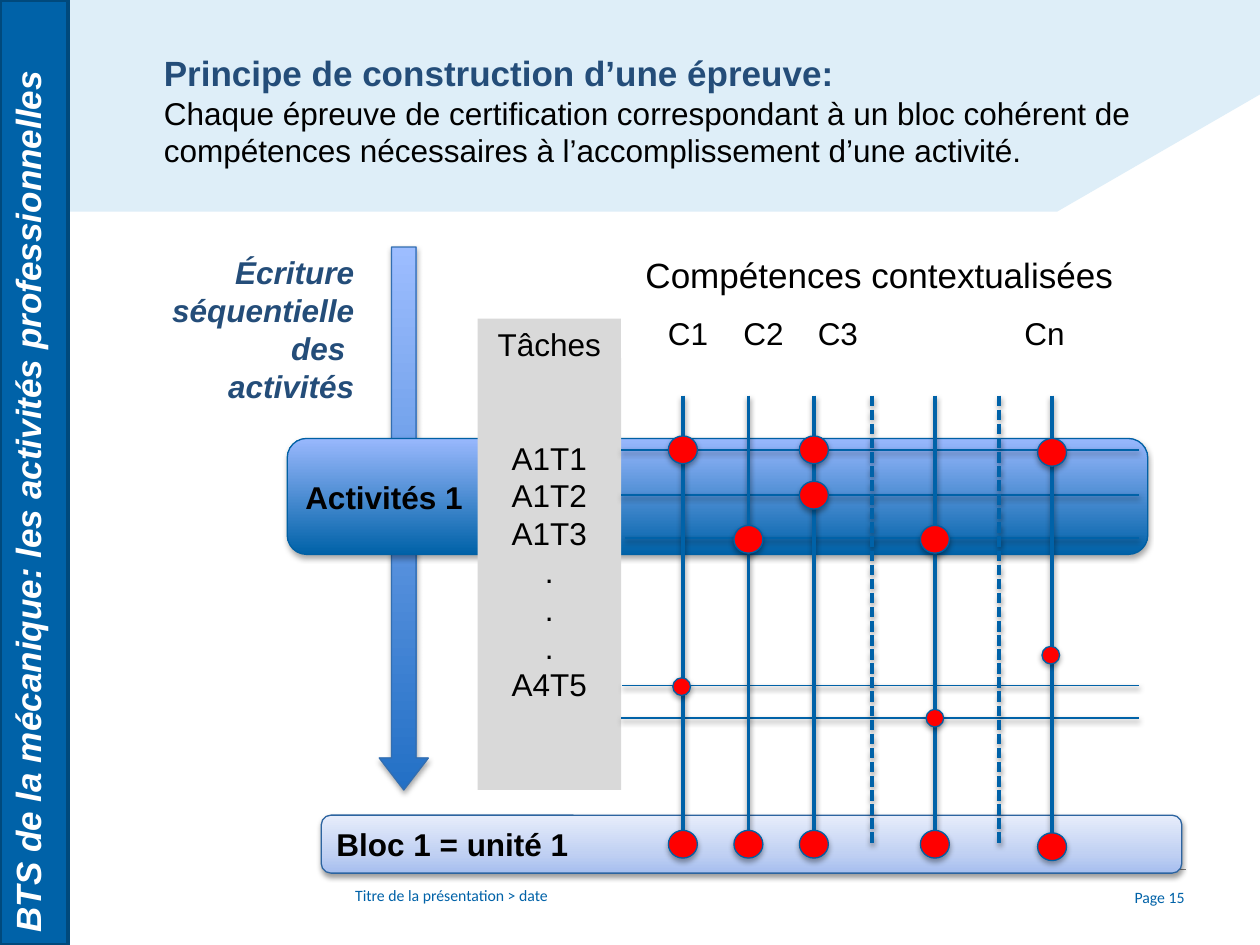
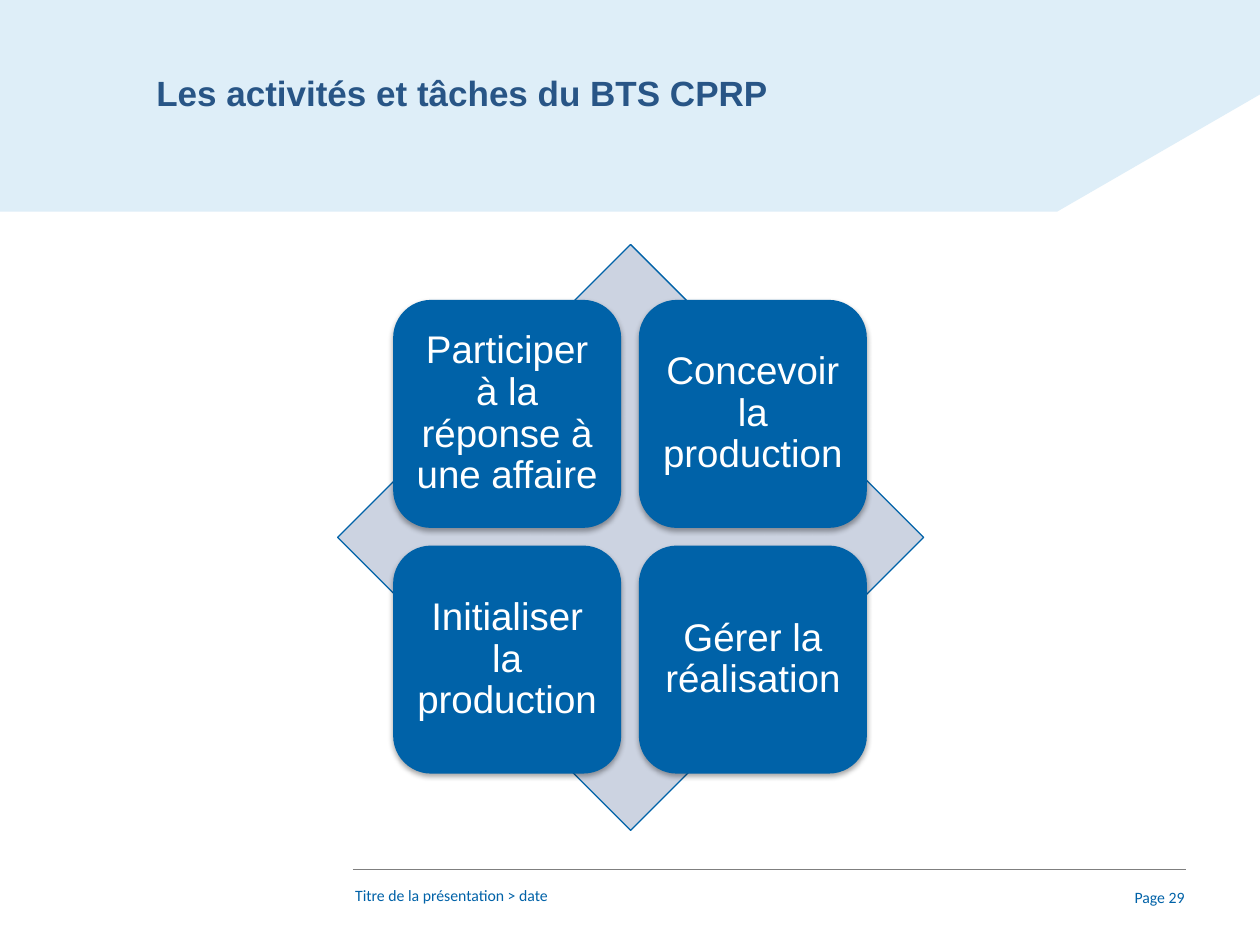
from itertools import product

from lxml.etree import SubElement
from pptx import Presentation
from pptx.dml.color import RGBColor
from pptx.enum.dml import MSO_LINE
from pptx.enum.shapes import MSO_CONNECTOR, MSO_SHAPE
from pptx.enum.text import MSO_ANCHOR, MSO_AUTO_SIZE, PP_ALIGN
from pptx.oxml.ns import qn
from pptx.util import Inches, Pt

COLORS = {
    "blue": "0062A8", "edge": "0060A4", "deep": "00497C", "band": "DEEEF8",
    "title": "244D79", "title_alt": "285586", "black": "000000", "white": "FFFFFF",
    "grey": "D9D9D9", "rule": "7F7F7F", "red": "FF0000", "diamond": "CCD3E1",
    "arrow_edge": "326EB1", "unit_edge": "2C64A0",
}
GRADIENTS = {
    "unit": [(0, "A6BEEF"), (35, "C1D1F3"), (100, "E7EDFB")],
    "arrow": [(0, "2370C5"), (100, "9DBDFF")],
    "activity": [(0, "0062A8"), (100, "99B8FD")],
}
FORMATS = {
    "footer": {"name": "Calibri", "size": Pt(9), "color": "blue"},
    "title": {"name": "Arial", "size": Pt(20), "bold": True, "color": "title"},
    "title_alt": {"name": "Arial", "size": Pt(20), "bold": True, "color": "title_alt"},
    "body": {"name": "Arial", "size": Pt(18), "bold": False, "color": "black"},
    "heading": {"name": "Arial", "size": Pt(20), "color": "black"},
    "strong": {"name": "Arial", "size": Pt(18), "bold": True, "color": "black"},
    "sequence": {"name": "Arial", "size": Pt(18), "bold": True, "italic": True, "color": "title"},
    "side": {"name": "Arial", "size": Pt(20), "bold": True, "italic": True, "color": "white"},
    "activity": {"name": "Arial", "size": Pt(22), "color": "white"},
}
LEFT, CENTER, RIGHT = PP_ALIGN.LEFT, PP_ALIGN.CENTER, PP_ALIGN.RIGHT
TOP, MIDDLE = MSO_ANCHOR.TOP, MSO_ANCHOR.MIDDLE


def paint(shape, fill=None, line=None, width=0.75, shadow=None):
    if fill in GRADIENTS:
        shape.fill.gradient()
        shape.fill.gradient_angle = 90
        stops = shape.element.spPr.find(".//" + qn("a:gsLst"))
        stops.clear()
        for position, color in GRADIENTS[fill]:
            stop = SubElement(stops, qn("a:gs"), pos=str(position * 1000))
            SubElement(stop, qn("a:srgbClr"), val=color)
    elif fill:
        shape.fill.solid()
        shape.fill.fore_color.rgb = RGBColor.from_string(COLORS[fill])
    if line:
        shape.line.color.rgb = RGBColor.from_string(COLORS[line])
        shape.line.width = Pt(width)
    else:
        shape.line.fill.background()
    effects = SubElement(shape.element.spPr, qn("a:effectLst"))
    if shadow:
        outer = SubElement(effects, qn("a:outerShdw"), blurRad=str(Pt(3.1)),
                           dist=str(Pt(1.7)), dir="5400000", rotWithShape="0")
        color = SubElement(outer, qn("a:srgbClr"), val=COLORS["black"])
        SubElement(color, qn("a:alpha"), val=str(shadow * 1000))
    return shape


def write(shape, lines, align=LEFT, anchor=TOP):
    frame = shape.text_frame
    settings = {"word_wrap": True, "auto_size": MSO_AUTO_SIZE.NONE, "vertical_anchor": anchor,
                "margin_left": Inches(0.1), "margin_right": Inches(0.1),
                "margin_top": Inches(0.05), "margin_bottom": Inches(0.05)}
    for name, value in settings.items():
        setattr(frame, name, value)
    for index, (text, style) in enumerate(lines):
        para = frame.add_paragraph() if index else frame.paragraphs[0]
        para.alignment = align
        span = para.add_run()
        span.text = text
        for name, value in FORMATS[style].items():
            if name == "color":
                span.font.color.rgb = RGBColor.from_string(COLORS[value])
            else:
                setattr(span.font, name, value)
    return frame


deck = Presentation()
deck.slide_width, deck.slide_height = Inches(10), Inches(7.5)

slide_titles = [
    ("Page 15", (1.2, 0.36, 8.18, 1.04), [
        ("Principe de construction d’une épreuve:", "title"),
        ("Chaque épreuve de certification correspondant à un bloc cohérent de "
         "compétences nécessaires à l’accomplissement d’une activité.", "body")]),
    ("Page 29", (1.14, 0.52, 7.87, 0.44), [
        ("Les activités et tâches du BTS CPRP", "title_alt")]),
]
for number, place, lines in slide_titles:
    page = deck.slides.add_slide(deck.slide_layouts[5])
    title = page.shapes.title
    title.left, title.top, title.width, title.height = map(Inches, place)
    write(title, lines)
    outline = page.shapes.build_freeform(Inches(10), 0)
    outline.add_line_segments([(Inches(x), Inches(y)) for x, y in
                               [(0, 0), (0, 1.68), (8.39, 1.68), (10, 0.75)]])
    band = paint(outline.convert_to_shape(), "band")
    title.element.addprevious(band.element)
    rule = page.shapes.add_connector(MSO_CONNECTOR.STRAIGHT, Inches(2.8), Inches(6.9),
                                     Inches(9.41), Inches(6.9))
    paint(rule, line="rule", width=0.5)
    footer = page.shapes.add_textbox(Inches(2.72), Inches(6.98), Inches(5.91), Inches(0.25))
    write(footer, [("Titre de la présentation > date", "footer")])
    page_number = page.shapes.add_textbox(Inches(8.62), Inches(6.95), Inches(0.88), Inches(0.34))
    write(page_number, [(number, "footer")], RIGHT, MIDDLE)

exam, activities = deck.slides

unit = exam.shapes.add_shape(MSO_SHAPE.ROUNDED_RECTANGLE, Inches(2.55), Inches(6.47),
                             Inches(6.83), Inches(0.46))
paint(unit, "unit", "unit_edge", shadow=38)
write(unit, [("Bloc 1 = unité 1", "strong")], anchor=MIDDLE)

arrow = exam.shapes.add_shape(MSO_SHAPE.DOWN_ARROW, Inches(3.01), Inches(1.96),
                              Inches(0.39), Inches(4.31))
arrow.adjustments[1] = 0.65
paint(arrow, "arrow", "arrow_edge", shadow=35)

activity = exam.shapes.add_shape(MSO_SHAPE.ROUNDED_RECTANGLE, Inches(2.28), Inches(3.48),
                                 Inches(6.83), Inches(0.92))
paint(activity, "activity", "edge", shadow=35)
write(activity, [("Activités 1", "strong")], anchor=MIDDLE)

tasks = exam.shapes.add_shape(MSO_SHAPE.RECTANGLE, Inches(3.79), Inches(2.53),
                              Inches(1.14), Inches(3.74))
paint(tasks, "grey")
task_names = ["Tâches", "A1T1", "A1T2", "A1T3", ".", ".", ".", "A4T5"]
frame = write(tasks, [(name, "body") for name in task_names], CENTER)
frame.paragraphs[1].space_before = Pt(43.4)

heading = exam.shapes.add_textbox(Inches(4.93), Inches(1.96), Inches(4.1), Inches(0.44))
write(heading, [("Compétences contextualisées", "heading")], CENTER)

skills = exam.shapes.add_shape(MSO_SHAPE.RECTANGLE, Inches(4.93), Inches(2.44),
                               Inches(3.78), Inches(0.4))
paint(skills, "white")
frame = write(skills, [("C1\tC2\tC3\tCn", "body")])
frame.margin_left = Inches(0.37)
tabs = SubElement(skills.element.txBody.find(".//" + qn("a:pPr")), qn("a:tabLst"))
for stop in (0.6, 1.19, 2.83):
    SubElement(tabs, qn("a:tab"), pos=str(Inches(stop)), algn="l")

task_rows = [(4.93, 3.57), (4.93, 3.93), (4.93, 5.7), (4.96, 4.27), (4.94, 5.44)]
skill_columns = [5.42, 5.94, 6.46, 7.42, 8.35]
dashed_columns = [6.92, 7.93]
grid = [(x, y, 9.04, y, 1) for x, y in task_rows]
grid += [(x, 3.14, x, 6.7, 2) for x in skill_columns + dashed_columns]
for x1, y1, x2, y2, width in grid:
    line = exam.shapes.add_connector(MSO_CONNECTOR.STRAIGHT, *map(Inches, (x1, y1, x2, y2)))
    if x1 in dashed_columns:
        line.line.dash_style = MSO_LINE.SQUARE_DOT
    paint(line, line="blue", width=width, shadow=38)

large, small = (0.23, 0.22), (0.14, 0.14)
dots = [(5.42, 3.57, large), (6.46, 3.57, large), (8.35, 3.59, large), (6.46, 3.93, large),
        (5.94, 4.28, large), (7.42, 4.28, large),
        (5.41, 5.45, small), (7.42, 5.7, small), (8.34, 5.2, small)]
dots += [(x, 6.7, large) for x in skill_columns[:-1]] + [(8.35, 6.72, large)]
for x, y, (width, height) in dots:
    dot = exam.shapes.add_shape(MSO_SHAPE.OVAL, Inches(x - width / 2), Inches(y - height / 2),
                                Inches(width), Inches(height))
    paint(dot, "red", "edge", shadow=35)

sequence = exam.shapes.add_textbox(Inches(1.06), Inches(1.96), Inches(1.85), Inches(1.31))
write(sequence, [(text, "sequence") for text in
                 ("Écriture séquentielle", "des ", "activités")], RIGHT)

side = exam.shapes.add_shape(MSO_SHAPE.RECTANGLE, 0, 0, Inches(0.54), Inches(7.5))
paint(side, "blue", "deep", 2)
write(side, [("BTS de la mécanique: les activités professionnelles", "side")])
side.element.txBody.bodyPr.set("vert", "vert270")

diamond = activities.shapes.add_shape(MSO_SHAPE.DIAMOND, Inches(2.68), Inches(1.94),
                                      Inches(4.65), Inches(4.65))
paint(diamond, "diamond", "blue")
activity_names = ["Participer à la réponse à une affaire", "Concevoir la production",
                  "Initialiser la production", "Gérer la réalisation"]
for name, (row, column) in zip(activity_names, product(range(2), repeat=2)):
    tile = activities.shapes.add_shape(MSO_SHAPE.ROUNDED_RECTANGLE,
                                       Inches(3.12 + 1.95 * column), Inches(2.38 + 1.95 * row),
                                       Inches(1.81), Inches(1.81))
    paint(tile, "blue", shadow=35)
    frame = write(tile, [(name, "activity")], CENTER, MIDDLE)
    frame.margin_left = frame.margin_right = Inches(0.09)
    frame.paragraphs[0].line_spacing = 0.9

deck.save("out.pptx")
